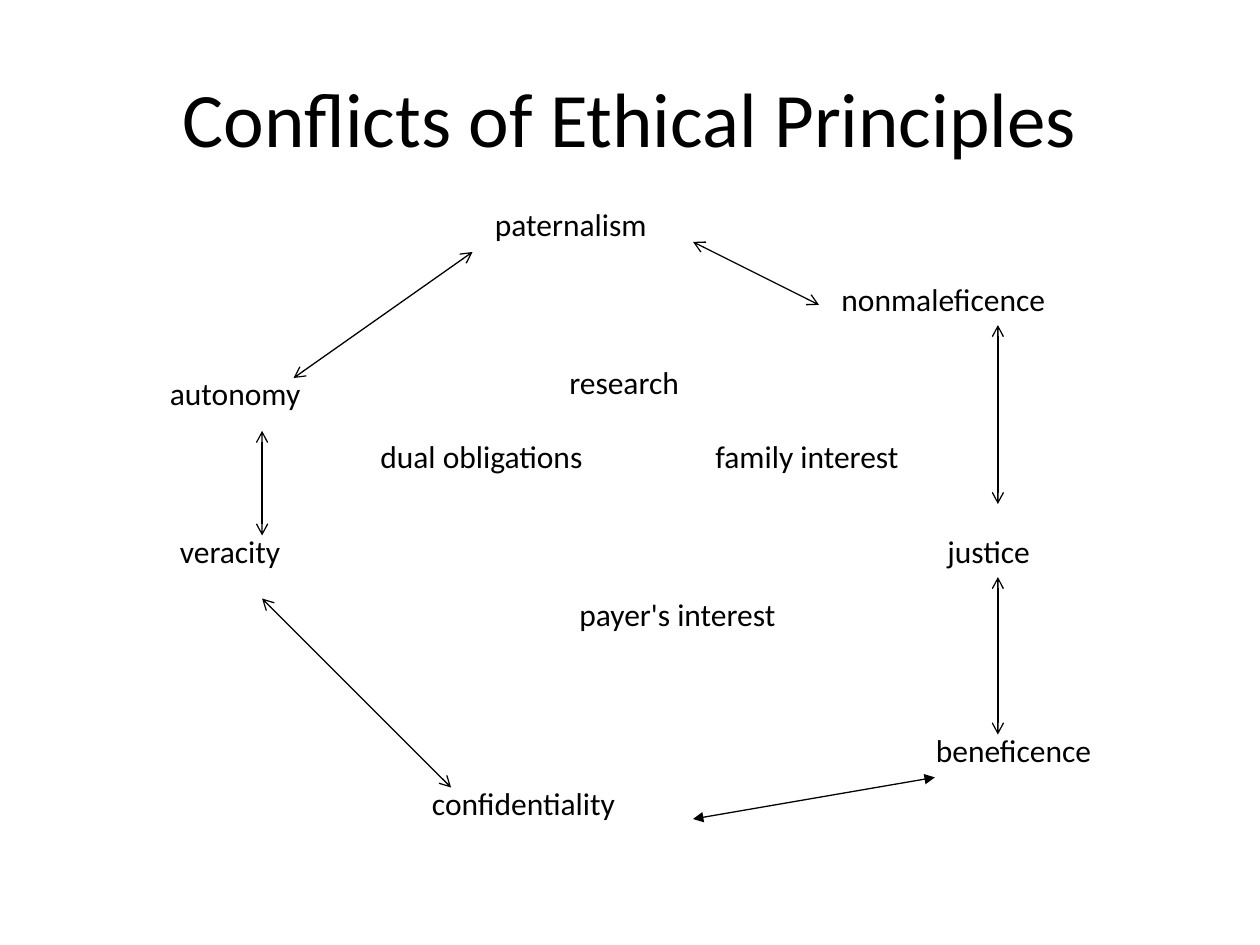
from pptx import Presentation
from pptx.dml.color import RGBColor
from pptx.enum.shapes import MSO_CONNECTOR
from pptx.enum.text import MSO_ANCHOR, PP_ALIGN
from pptx.oxml.ns import qn
from pptx.util import Inches, Pt
from lxml.etree import SubElement

BLACK = RGBColor(0, 0, 0)
FONT = "Calibri"

# Label: left, top, width, height in inches, relative to the diagram
RING = {
    "autonomy": (0.75, 1.34, 1.83, 0.5),
    "veracity": (0.83, 2.59, 1.92, 0.5),
    "confidentiality": (2.83, 4.59, 2.58, 0.5),
    "paternalism": (3.33, 0, 2.5, 0.5),
    "nonmaleficence": (6.08, 0.59, 2.83, 0.5),
    "justice": (6.92, 2.59, 2.17, 0.5),
    "beneficence": (6.83, 4.17, 2.33, 0.5),
}
CENTER = {
    "research": (3.92, 1.25, 2.42, 0.5),
    "dual obligations": (2.42, 1.84, 2.08, 0.9),
    "family interest": (5.08, 1.84, 1.67, 0.9),
    "payer's interest": (4, 3.09, 2.08, 0.9),
}
# Start x, y, end x, y and arrowhead, relative to the diagram
ARROWS = [
    (1.58, 3.17, 3.08, 4.67, "arrow"),
    (7.42, 4.25, 7.42, 3, "arrow"),
    (7.42, 2.42, 7.42, 1, "arrow"),
    (6, 0.84, 5, 0.34, "arrow"),
    (3.25, 0.42, 1.83, 1.42, "arrow"),
    (1.58, 1.84, 1.58, 2.67, "arrow"),
    (5, 4.92, 6.92, 4.59, "triangle"),
]


def add_text(slide, text, left, top, width, height, size=18):
    box = slide.shapes.add_textbox(left, top, width, height)
    frame = box.text_frame
    frame.word_wrap = True
    line = frame.paragraphs[0]
    line.text = text
    line.font.name = FONT
    line.font.size = Pt(size)
    line.font.color.rgb = BLACK
    return frame


def add_arrow(slide, x1, y1, x2, y2, head):
    arrow = slide.shapes.add_connector(MSO_CONNECTOR.STRAIGHT, x1, y1, x2, y2)
    arrow.line.color.rgb = BLACK
    arrow.line.width = Pt(0.75)
    # Heads at both ends, no shadow
    stroke = arrow.line._get_or_add_ln()
    for end in ("a:headEnd", "a:tailEnd"):
        SubElement(stroke, qn(end), type=head)
    SubElement(arrow._element.spPr, qn("a:effectLst"))


def add_title(slide, left, top, width, height):
    frame = add_text(slide, "Conflicts of Ethical Principles",
                     left, top, width, height, 44)
    frame.vertical_anchor = MSO_ANCHOR.MIDDLE
    frame.paragraphs[0].alignment = PP_ALIGN.CENTER


def add_diagram(slide, left, top):
    # Principles around the ring, competing interests inside it
    for text, (x, y, width, height) in (RING | CENTER).items():
        add_text(slide, text, left + Inches(x), top + Inches(y),
                 Inches(width), Inches(height))
    # Conflicts between neighbours
    for x1, y1, x2, y2, head in ARROWS:
        add_arrow(slide, left + Inches(x1), top + Inches(y1),
                  left + Inches(x2), top + Inches(y2), head)


def main():
    deck = Presentation()
    deck.slide_width, deck.slide_height = Inches(10), Inches(7.5)
    slide = deck.slides.add_slide(deck.slide_layouts[6])
    add_title(slide, Inches(0.5), Inches(0.3), Inches(9), Inches(1.25))
    add_diagram(slide, Inches(0.5), Inches(1.58))
    deck.save("out.pptx")


if __name__ == "__main__":
    main()
